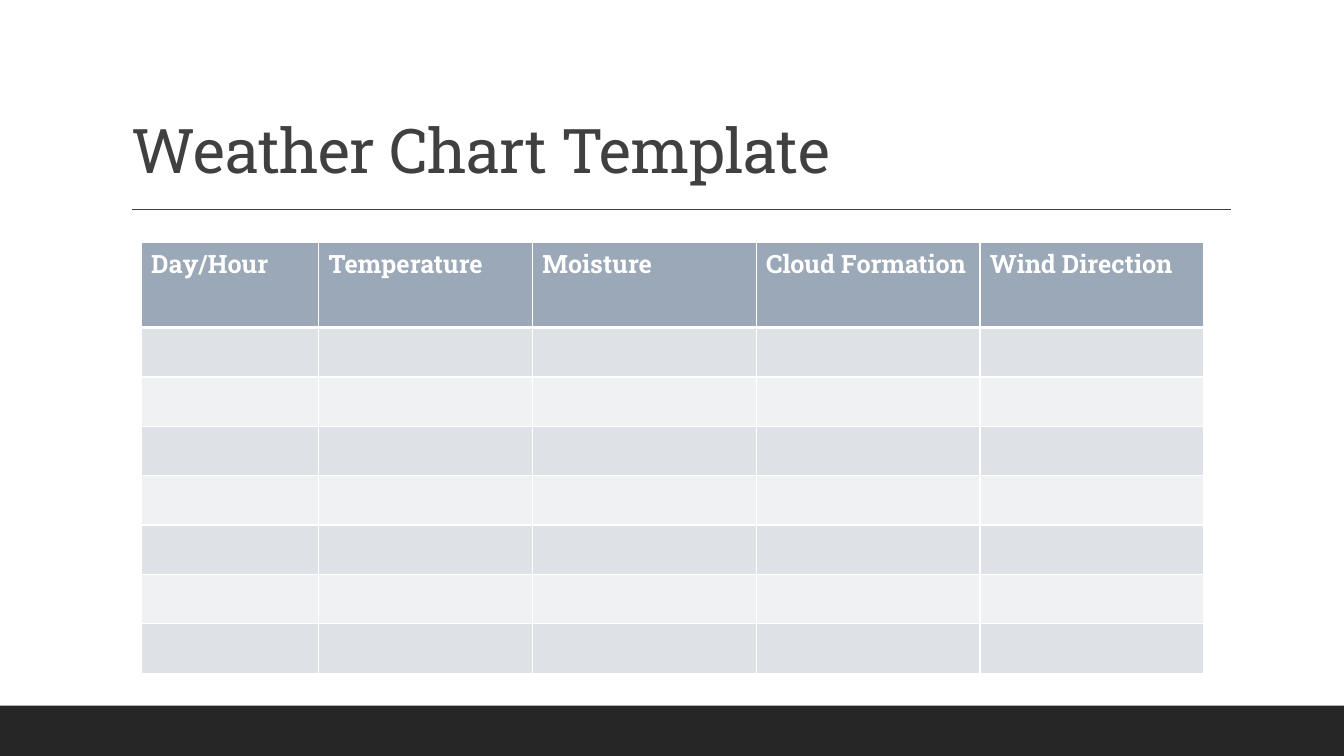
from lxml.etree import SubElement
from pptx import Presentation
from pptx.dml.color import RGBColor
from pptx.enum.shapes import MSO_CONNECTOR as Connector, MSO_SHAPE as Shape
from pptx.enum.text import MSO_ANCHOR as Anchor, PP_ALIGN as Align
from pptx.oxml.ns import qn
from pptx.util import Inches, Pt

FONT = "Roboto Slab"
HEADERS = ["Day/Hour", "Temperature", "Moisture", "Cloud Formation", "Wind Direction"]
COLUMN_WIDTHS = [1.76, 2.12, 2.22, 2.22, 2.22]
HEADER_HEIGHT, ROW_HEIGHT, BODY_ROWS = 0.85, 0.49, 7
HEADER_FILL, BAND_FILLS = "9BA8B7", ["DEE1E6", "EFF1F3"]


def color(value):
    return RGBColor.from_string(value)


def set_fill(item, value):
    item.fill.solid()
    item.fill.fore_color.rgb = color(value)


def format_font(font, value, **formats):
    for name, setting in {"name": FONT, **formats}.items():
        setattr(font, name, setting)
    font.color.rgb = color(value)


def set_borders(cell, widths):
    properties = cell._tc.get_or_add_tcPr()
    for side, points in widths.items():
        line = SubElement(properties, qn(f"a:ln{side}"), w=str(Pt(points)))
        fill = SubElement(line, qn("a:solidFill"))
        SubElement(fill, qn("a:srgbClr"), val="FFFFFF")


def add_footer_band(slide, left, top, width, height):
    band = slide.shapes.add_shape(
        Shape.RECTANGLE, Inches(left), Inches(top), Inches(width), Inches(height))
    band.shadow.inherit = False
    set_fill(band, "262626")
    band.line.fill.background()


def add_title(slide, left, top, width, height):
    # Rule below the title
    rule_left, rule_top = left + 0.11, top + height + 0.18
    rule = slide.shapes.add_connector(
        Connector.STRAIGHT, Inches(rule_left), Inches(rule_top),
        Inches(rule_left + 10.9), Inches(rule_top))
    rule.line.color.rgb = color("404040")
    rule.line.width = Pt(1)
    SubElement(rule._element.spPr, qn("a:effectLst"))

    # Title text
    title = slide.shapes.title
    title.left, title.top = Inches(left), Inches(top)
    title.width, title.height = Inches(width), Inches(height)
    title.text_frame.vertical_anchor = Anchor.BOTTOM
    title.text_frame.word_wrap = True
    para = title.text_frame.paragraphs[0]
    para.alignment, para.line_spacing = Align.LEFT, 0.9
    span = para.add_run()
    span.text = "Weather Chart Template"
    format_font(span.font, "404040", size=Pt(44))
    span._r.get_or_add_rPr().set("spc", "-50")


def add_weather_table(slide, left, top, width, height):
    table = slide.shapes.add_table(
        BODY_ROWS + 1, len(HEADERS), Inches(left), Inches(top),
        Inches(width), Inches(height)).table
    for column, column_width in zip(table.columns, COLUMN_WIDTHS):
        column.width = Inches(column_width)

    for i, row in enumerate(table.rows):
        row.height = Inches(ROW_HEIGHT if i else HEADER_HEIGHT)
        for j, cell in enumerate(row.cells):
            # Heavier line between the header and the body
            set_borders(cell, {"L": 1, "R": 1, "T": 3 if i == 1 else 1,
                               "B": 1 if i else 3})
            set_fill(cell, BAND_FILLS[(i - 1) % 2] if i else HEADER_FILL)
            if i == 0:
                span = cell.text_frame.paragraphs[0].add_run()
                span.text = HEADERS[j]
                format_font(span.font, "FFFFFF", size=Pt(18), bold=True)


def main():
    deck = Presentation()
    deck.slide_width, deck.slide_height = Inches(13.33), Inches(7.5)
    slide = deck.slides.add_slide(deck.slide_layouts[5])
    add_footer_band(slide, 0, 7, 13.33, 0.5)
    add_title(slide, 1.2, 0.31, 11, 1.59)
    add_weather_table(slide, 1.4, 2.4, sum(COLUMN_WIDTHS),
                      HEADER_HEIGHT + BODY_ROWS * ROW_HEIGHT)
    deck.save("out.pptx")


if __name__ == "__main__":
    main()
